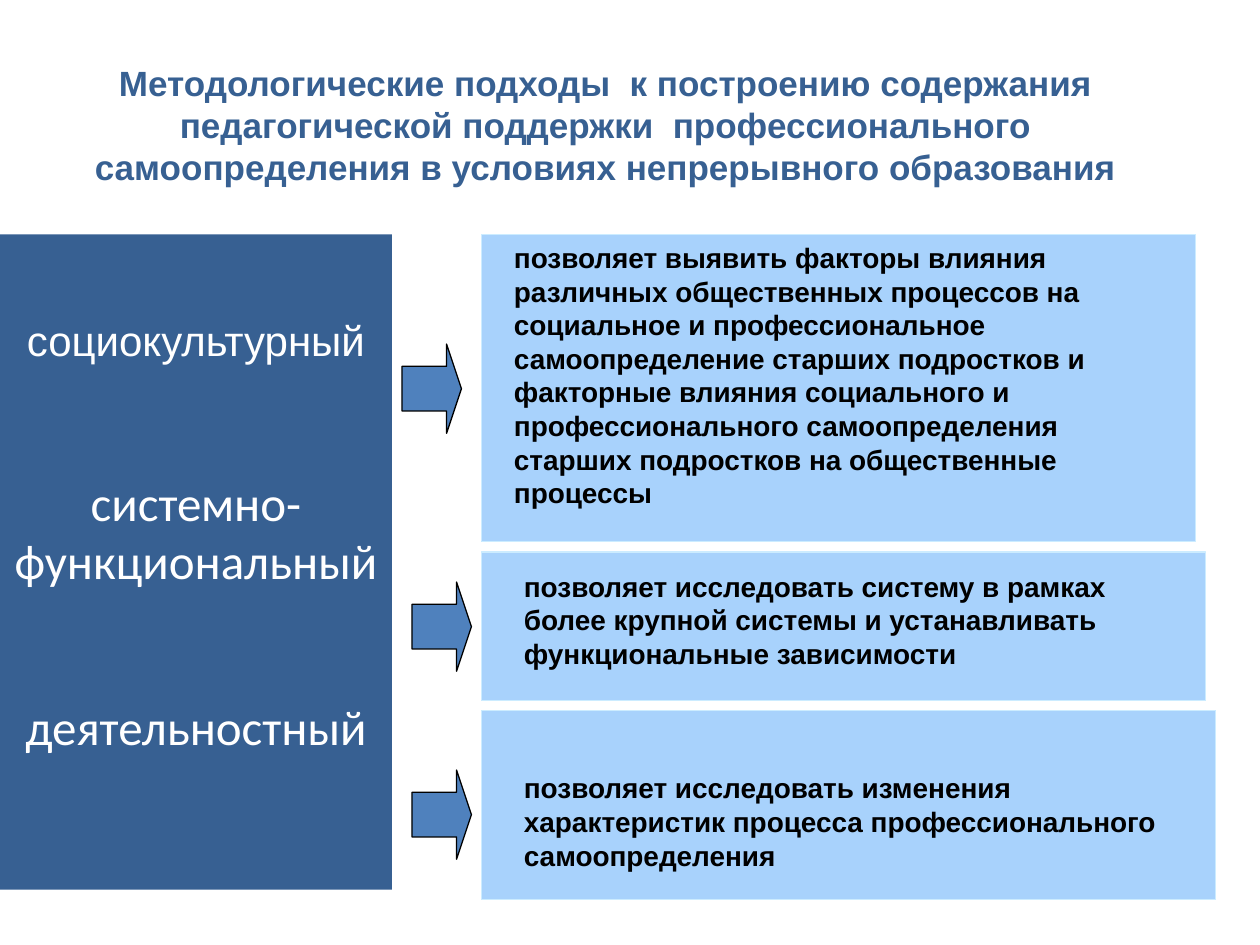
import pptx
import pptx.util
import pptx.dml.color
import pptx.enum.shapes
import pptx.enum.text

Pt = pptx.util.Pt
SHAPES = pptx.enum.shapes.MSO_SHAPE
ALIGN = pptx.enum.text.PP_ALIGN
ANCHOR = pptx.enum.text.MSO_ANCHOR

COLORS = {
    "navy": "376092",
    "arrow": "4F81BD",
    "card": "A8D2FC",
    "card_line": "CCECFF",
    "black": "000000",
    "white": "FFFFFF",
}


class SlideBuilder:
    """Holds the style and the current slide."""

    font = "Arial"
    line_width = 0.75

    def __init__(self, presentation):
        self.slide = presentation.slides.add_slide(presentation.slide_layouts[5])

    def color(self, name):
        return pptx.dml.color.RGBColor.from_string(COLORS[name])

    def format_paragraph(self, paragraph, size, color, bold=False, align=ALIGN.LEFT, font=None):
        paragraph.alignment = align
        for run in paragraph.runs:
            run.font.name = font or self.font
            run.font.size = Pt(size)
            run.font.bold = bold
            run.font.color.rgb = self.color(color)

    def title(self, text, left, top, width, height):
        title = self.slide.shapes.title
        title.left, title.top, title.width, title.height = map(Pt, (left, top, width, height))
        frame = title.text_frame
        frame.text = text
        frame.word_wrap = True
        frame.auto_size = pptx.enum.text.MSO_AUTO_SIZE.NONE
        frame.vertical_anchor = ANCHOR.TOP
        self.format_paragraph(frame.paragraphs[0], 20, "navy", True, ALIGN.CENTER)

    def shape(self, kind, left, top, width, height, fill, line=None):
        shape = self.slide.shapes.add_shape(kind, *map(Pt, (left, top, width, height)))
        shape.shadow.inherit = False
        shape.fill.solid()
        shape.fill.fore_color.rgb = self.color(fill)
        if line:
            shape.line.color.rgb = self.color(line)
            shape.line.width = Pt(self.line_width)
        else:
            shape.line.fill.background()
        return shape

    def panel(self, left, top, width, height, entries, first_gap, gap):
        panel = self.shape(SHAPES.RECTANGLE, left, top, width, height, "navy")
        frame = panel.text_frame
        frame.word_wrap = True
        frame.vertical_anchor = ANCHOR.TOP
        frame.margin_left = frame.margin_right = Pt(4)
        frame.margin_top = Pt(first_gap)
        frame.text = "\n".join(text for text, size, font in entries)
        for paragraph, (text, size, font) in zip(frame.paragraphs, entries):
            self.format_paragraph(paragraph, size, "white", align=ALIGN.CENTER, font=font)
        for paragraph in frame.paragraphs[1:]:
            paragraph.space_before = Pt(gap)

    def arrow(self, left, top):
        arrow = self.shape(SHAPES.RIGHT_ARROW, left, top, 34, 51, "arrow", "black")
        arrow.adjustments[0] = 0.5
        arrow.adjustments[1] = 0.25

    def text(self, text, left, top, width, height):
        box = self.slide.shapes.add_textbox(*map(Pt, (left, top, width, height)))
        frame = box.text_frame
        frame.word_wrap = True
        frame.text = text
        self.format_paragraph(frame.paragraphs[0], 16, "black", True)

    def card(self, top, width, height, text, text_box):
        self.shape(SHAPES.RECTANGLE, 275, top, width, height, "card", "card_line")
        self.text(text, *text_box)


def main():
    presentation = pptx.Presentation()
    presentation.slide_width, presentation.slide_height = Pt(720), Pt(540)
    builder = SlideBuilder(presentation)

    # Heading
    builder.title(
        "Методологические подходы  к построению содержания педагогической поддержки  "
        "профессионального самоопределения в условиях непрерывного образования",
        42.5, 31.7, 607, 80)

    # Approaches
    approaches = [
        ("социокультурный", 24, "Arial"),
        ("системно-функциональный", 28, "Calibri"),
        ("деятельностный", 28, "Calibri"),
    ]
    builder.panel(0, 134, 224, 374.4, approaches, first_gap=46, gap=61)

    # Arrows from each approach to its explanation
    for left, top in ((229.7, 196.6), (235.4, 332.6), (235.4, 440)):
        builder.arrow(left, top)

    # Explanations: top, width, height, text, text box
    cards = [
        (134, 408, 175.7,
         "позволяет выявить факторы влияния различных общественных процессов на "
         "социальное и профессиональное самоопределение старших подростков и "
         "факторные влияния социального и профессионального самоопределения "
         "старших подростков на общественные процессы",
         (286.6, 134, 380, 186)),
        (315.4, 414, 85,
         "позволяет исследовать систему в рамках более крупной системы и "
         "устанавливать функциональные зависимости",
         (292.3, 321.8, 380, 65.5)),
        (406, 419.8, 108,
         "позволяет исследовать изменения характеристик процесса "
         "профессионального самоопределения",
         (292.3, 437, 385, 66)),
    ]
    for card in cards:
        builder.card(*card)

    presentation.save("out.pptx")


if __name__ == "__main__":
    main()
